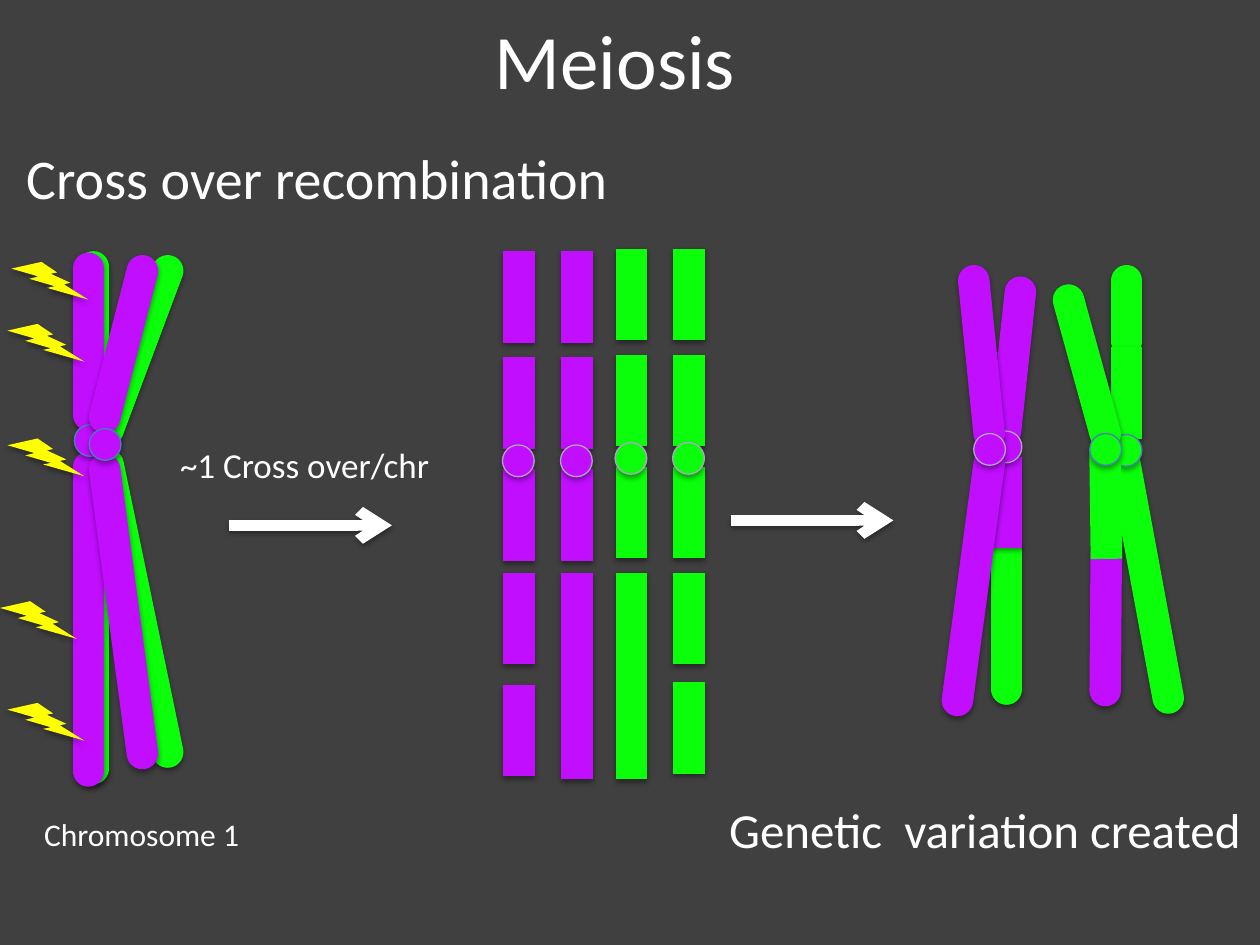
import pptx
import pptx.dml.color
import pptx.enum.shapes
import pptx.enum.text
import pptx.oxml
import pptx.oxml.ns
import pptx.util
from dataclasses import dataclass

Cm = pptx.util.Cm
Pt = pptx.util.Pt
MSO_SHAPE = pptx.enum.shapes.MSO_SHAPE
PP_ALIGN = pptx.enum.text.PP_ALIGN
MSO_ANCHOR = pptx.enum.text.MSO_ANCHOR


@dataclass(frozen=True)
class Theme:
    font: str = "Calibri"
    background: str = "404040"
    white: str = "FFFFFF"
    purple: str = "C10EFF"
    green: str = "0BFF0B"
    yellow: str = "FFFF00"
    blue_rim: str = "4B7EBC"
    lilac_rim: str = "B3A2C7"
    title: int = 44
    heading: int = 32
    result: int = 28
    note: int = 20
    label: int = 18
    arm: int = 18
    arrow: int = 6
    rim: float = 0.75


class Diagram:
    def __init__(self, slide, theme):
        self.s = slide
        self.theme = theme
        fill = slide.background.fill
        fill.solid()
        fill.fore_color.rgb = self.rgb(theme.background)

    def rgb(self, color):
        return pptx.dml.color.RGBColor.from_string(color)

    def effect(self, sp, alpha, dist):
        inner = ""
        if alpha:
            inner = (
                f'<a:outerShdw blurRad="{Pt(3.1)}" dist="{Pt(dist)}" dir="5400000" rotWithShape="0">'
                f'<a:srgbClr val="000000"><a:alpha val="{alpha * 1000}"/></a:srgbClr></a:outerShdw>'
            )
        xml = f'<a:effectLst {pptx.oxml.ns.nsdecls("a")}>{inner}</a:effectLst>'
        sp._element.spPr.append(pptx.oxml.parse_xml(xml))

    def text(self, text, left, top, width, height, size, align=PP_ALIGN.LEFT,
             anchor=MSO_ANCHOR.TOP, wrap=False):
        sp = self.s.shapes.add_textbox(Cm(left), Cm(top), Cm(width), Cm(height))
        tf = sp.text_frame
        tf.word_wrap = wrap
        tf.vertical_anchor = anchor
        tf.text = text
        p = tf.paragraphs[0]
        p.alignment = align
        r = p.runs[0]
        r.font.name = self.theme.font
        r.font.size = Pt(size)
        r.font.color.rgb = self.rgb(self.theme.white)

    def line(self, x1, y1, x2, y2, color, width, cap="flat", arrow=False, shadow=True):
        sp = self.s.shapes.add_connector(
            pptx.enum.shapes.MSO_CONNECTOR.STRAIGHT, Cm(x1), Cm(y1), Cm(x2), Cm(y2))
        sp.line.color.rgb = self.rgb(color)
        sp.line.width = Pt(width)
        ln = sp.line._ln
        ln.set("cap", cap)
        if arrow:
            ln.append(pptx.oxml.parse_xml(
                f'<a:tailEnd {pptx.oxml.ns.nsdecls("a")} type="arrow"/>'))
        self.effect(sp, 38 if shadow else 0, 1.6)

    def arm(self, x1, y1, x2, y2, color):
        self.line(x1, y1, x2, y2, color, self.theme.arm, "rnd")

    def segment(self, x1, y1, x2, y2, color, shadow=True):
        self.line(x1, y1, x2, y2, color, self.theme.arm, "sq", shadow=shadow)

    def arrow(self, x1, x2, y):
        self.line(x1, y, x2, y, self.theme.white, self.theme.arrow, arrow=True)

    def shape(self, kind, left, top, width, height, color, rim=None):
        sp = self.s.shapes.add_shape(kind, Cm(left), Cm(top), Cm(width), Cm(height))
        sp.fill.solid()
        sp.fill.fore_color.rgb = self.rgb(color)
        if rim:
            sp.line.color.rgb = self.rgb(rim)
            sp.line.width = Pt(self.theme.rim)
        else:
            sp.line.fill.background()
        self.effect(sp, 35, 1.8)

    def centromere(self, left, top, color, rim):
        self.shape(MSO_SHAPE.OVAL, left, top, 0.64, 0.64, color, rim)

    def bolt(self, left, top):
        self.shape(MSO_SHAPE.LIGHTNING_BOLT, left, top, 1.55, 0.76, self.theme.yellow)

    def cut_chromatid(self, x, top, color, cut_low):
        length, low_top, low_end = 1.21, 11.86, 15.39
        tops = [top, top + 2.14, top + 4.4]
        if cut_low:
            tops += [low_top, top + 8.74]
        else:
            self.segment(x, low_top, x, low_end, color)
        for y in tops:
            self.segment(x, y, x, y + length, color)
        self.centromere(x - 0.33, top + 3.59, color, self.theme.lilac_rim)


def main():
    prs = pptx.Presentation()
    prs.slide_width, prs.slide_height = Cm(25.4), Cm(19.05)
    t = Theme()
    d = Diagram(prs.slides.add_slide(prs.slide_layouts[6]), t)

    d.text("Meiosis", 0.97, -0.41, 22.86, 3.18, t.title,
           PP_ALIGN.CENTER, MSO_ANCHOR.MIDDLE, True)
    d.text("Cross over recombination", 0.28, 2.77, 12.4, 1.63, t.heading)
    d.text("~1 Cross over/chr", 3.38, 8.81, 5.61, 1.12, t.note)
    d.text("Genetic  variation created", 14.45, 16, 11, 1.45, t.result)
    d.text("Chromosome 1", 0.64, 16.31, 4.5, 1.02, t.label)
    d.arrow(4.62, 7.9, 10.59)
    d.arrow(14.73, 18.01, 10.49)

    paired_chromosomes = [
        (t.green,
         [(1.88, 5.38, 1.88, 8.31), (1.88, 9.37, 1.88, 15.49)], (1.55, 8.56),
         [(3.38, 5.46, 2.18, 8.66), (2.18, 9.37, 3.38, 15.16)], (1.73, 8.59)),
        (t.purple,
         [(1.78, 5.41, 1.78, 8.36), (1.78, 9.42, 1.78, 15.54)], (1.5, 8.56),
         [(2.87, 5.46, 2.11, 8.41), (2.11, 9.47, 2.87, 15.19)], (1.8, 8.64)),
    ]
    for color, *chromatids in paired_chromosomes:
        for arms, center in zip(chromatids[::2], chromatids[1::2]):
            for ends in arms:
                d.arm(*ends, color)
            d.centromere(*center, color, t.blue_rim)

    for left, top in [(0.23, 5.28), (0.15, 6.53), (0.15, 8.84), (0, 12.12), (0.15, 14.17)]:
        d.bolt(left, top)

    for x, top, color, cut_low in [
        (13.89, 5.33, t.green, True),
        (12.73, 5.33, t.green, False),
        (11.63, 5.38, t.purple, False),
        (10.46, 5.38, t.purple, True),
    ]:
        d.cut_chromatid(x, top, color, cut_low)

    d.arm(20.57, 5.89, 20.27, 8.69, t.purple)
    d.arm(20.29, 11.13, 20.29, 13.89, t.green)
    d.segment(20.29, 9.53, 20.29, 10.72, t.purple)
    d.centromere(19.96, 8.69, t.purple, t.lilac_rim)
    d.arm(19.63, 5.66, 19.94, 8.74, t.purple)
    d.arm(19.94, 9.35, 19.3, 14.12, t.purple)
    d.centromere(19.63, 8.74, t.purple, t.lilac_rim)

    d.arm(22.3, 11.15, 22.28, 13.92, t.purple)
    d.arm(22.71, 5.66, 22.71, 6.88, t.green)
    d.arm(22.68, 9.37, 23.55, 14.07, t.green)
    d.segment(22.71, 7.32, 22.71, 8.53, t.green)
    d.centromere(22.38, 8.76, t.green, t.blue_rim)
    d.arm(21.54, 6.05, 22.28, 8.74, t.green)
    d.segment(22.28, 9.37, 22.3, 10.95, t.green, shadow=False)
    d.centromere(21.97, 8.74, t.green, t.blue_rim)

    prs.save("out.pptx")


if __name__ == "__main__":
    main()
